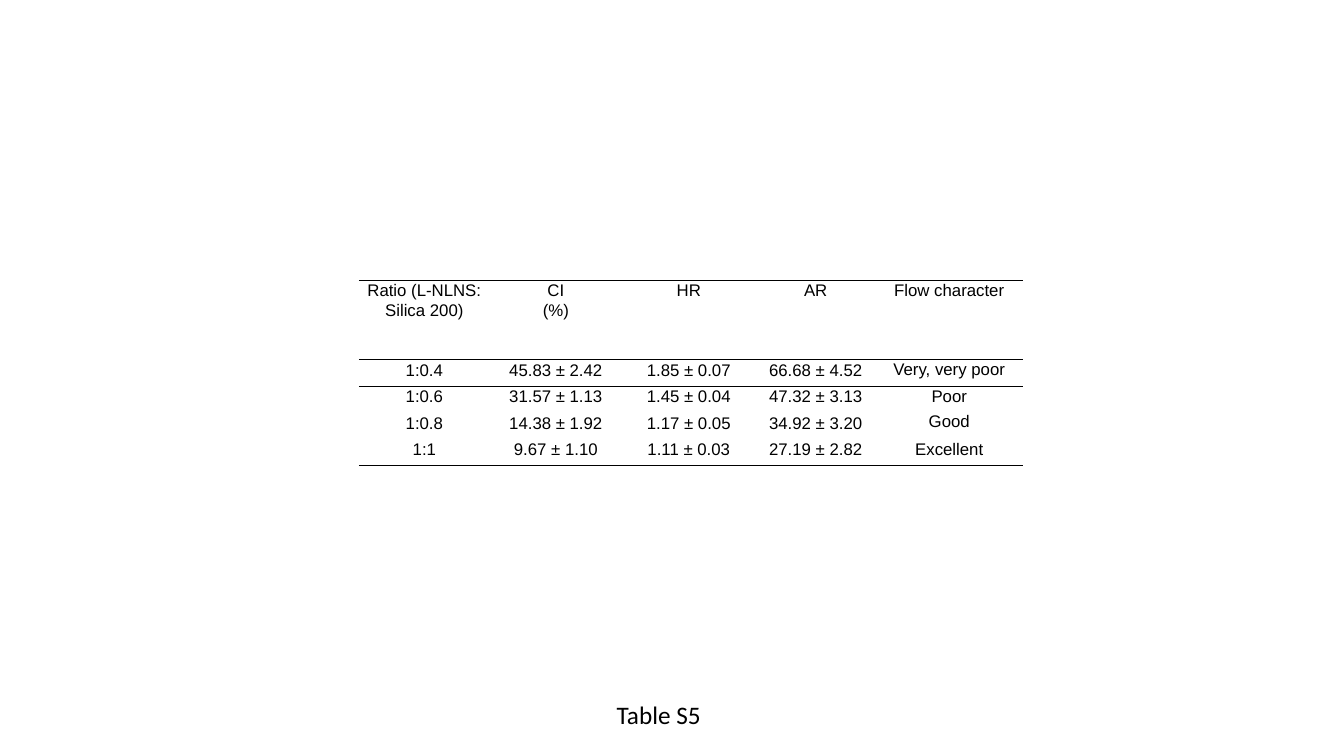
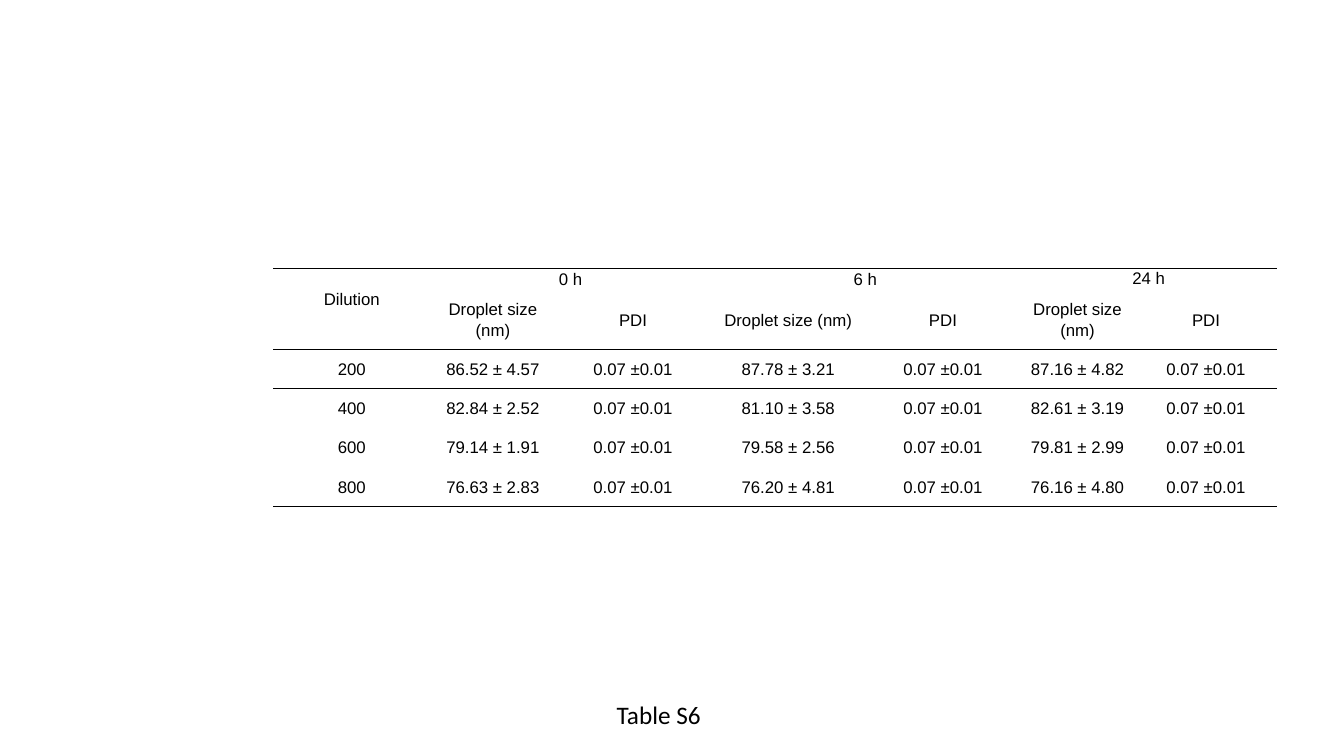
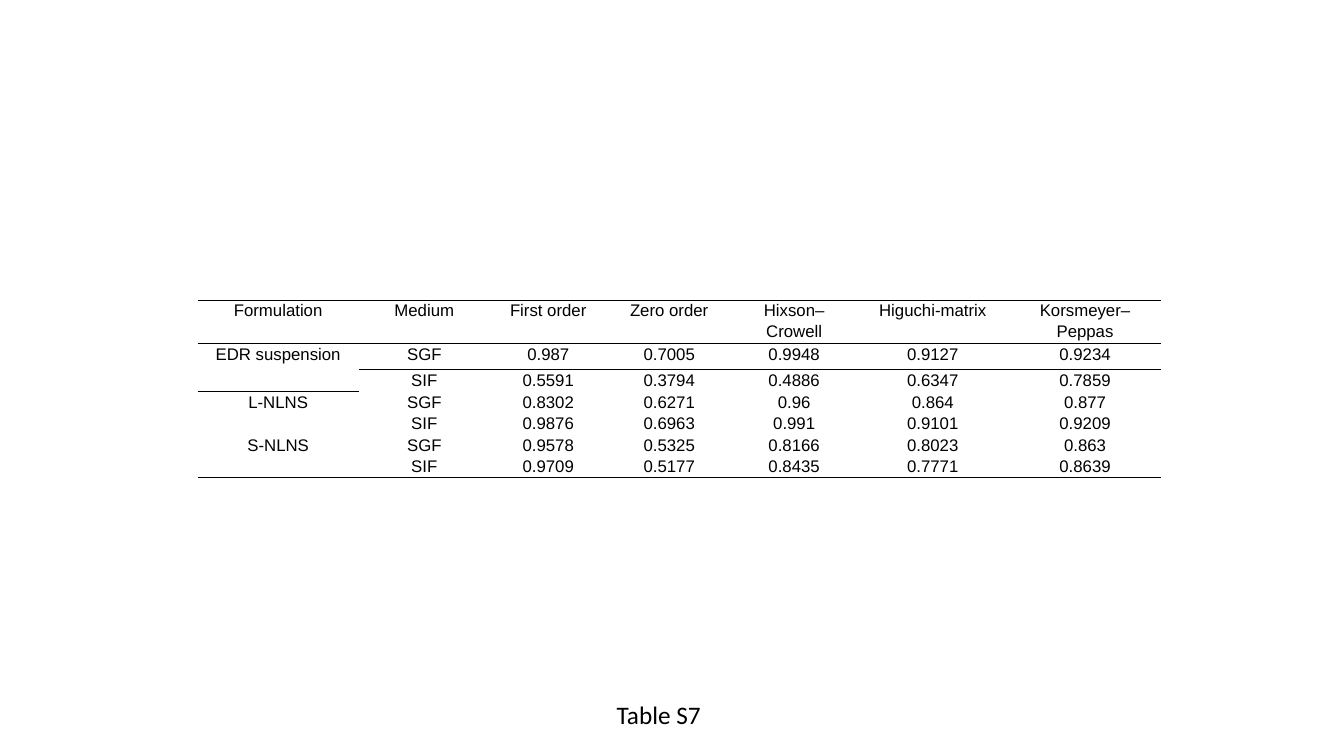
from dataclasses import dataclass, field

from lxml import etree
from pptx import Presentation
from pptx.dml.color import RGBColor
from pptx.enum.text import MSO_ANCHOR, MSO_AUTO_SIZE, PP_ALIGN
from pptx.oxml.ns import qn
from pptx.util import Inches, Pt

CENTER = PP_ALIGN.CENTER
TOP, MIDDLE = MSO_ANCHOR.TOP, MSO_ANCHOR.MIDDLE
FIT_TEXT = MSO_AUTO_SIZE.SHAPE_TO_FIT_TEXT

COLORS = {"text": "000000", "rule": "000000"}
FONTS = {"table": "Arial", "caption": "Calibri"}
PLAIN_STYLE = "{2D5ABB26-0587-4C30-8999-92F81FD0307C}"
W, H = Inches(13.33), Inches(7.5)
CAPTION_BOX = (45.15, 91.87, 9.08, 5.33)


def across(share):
    return round(W * share / 100)


def down(share):
    return round(H * share / 100)


@dataclass
class TableSpec:
    caption: str
    origin: tuple
    cols: list
    rows: list
    data: list
    rules: set
    merges: list = field(default_factory=list)
    anchor: object = TOP
    styles: dict = field(default_factory=dict)


def add_run(p, text, font, size):
    r = p.add_run()
    r.text = text
    r.font.name = font
    r.font.size = Pt(size)
    r.font.color.rgb = RGBColor.from_string(COLORS["text"])


def add_caption(slide, text, box):
    x, y, w, h = box
    sp = slide.shapes.add_textbox(across(x), down(y), across(w), down(h))
    tf = sp.text_frame
    tf.word_wrap = True
    tf.auto_size = FIT_TEXT
    add_run(tf.paragraphs[0], text, FONTS["caption"], 18)


def draw_rule(cell, side):
    ln = etree.Element(qn("a:" + side), w=str(Pt(1)))
    fill = etree.SubElement(ln, qn("a:solidFill"))
    etree.SubElement(fill, qn("a:srgbClr"), val=COLORS["rule"])
    cell._tc.get_or_add_tcPr().insert(0, ln)


def fill_cell(cell, text, anchor, margin=0.07, spacing=1.07, bottom=0):
    cell.fill.background()
    cell.margin_left = cell.margin_right = Inches(margin)
    cell.margin_top, cell.margin_bottom = 0, Inches(bottom)
    cell.vertical_anchor = anchor
    if text is None:
        return
    tf = cell.text_frame
    for i, line in enumerate(text.split("\n")):
        p = tf.add_paragraph() if i else tf.paragraphs[0]
        p.alignment = CENTER
        p.line_spacing = spacing
        add_run(p, line, FONTS["table"], 12)


def add_data_table(slide, t):
    x, y = t.origin
    frame = slide.shapes.add_table(len(t.rows), len(t.cols), across(x), down(y),
                                   across(sum(t.cols)), down(sum(t.rows)))
    table = frame.table
    table._tbl.tblPr.find(qn("a:tableStyleId")).text = PLAIN_STYLE
    table.first_row = table.horz_banding = False
    for col, width in zip(table.columns, t.cols):
        col.width = across(width)
    for row, height in zip(table.rows, t.rows):
        row.height = down(height)
    for first, last in t.merges:
        table.cell(*first).merge(table.cell(*last))
    for r, values in enumerate(t.data):
        for c, text in enumerate(values):
            cell = table.cell(r, c)
            fill_cell(cell, text, **{"anchor": t.anchor, **t.styles.get((r, c), {})})
            if t.rules & set(range(r, r + cell.span_height)):
                draw_rule(cell, "lnB")
            if r == 0:
                draw_rule(cell, "lnT")


def add_table_slide(prs, t):
    slide = prs.slides.add_slide(prs.slide_layouts[6])
    add_data_table(slide, t)
    add_caption(slide, t.caption, CAPTION_BOX)


FLOW = TableSpec(
    caption="Table S5",
    origin=(26.7, 37.07),
    cols=[9.75, 9.82, 9.97, 8.92, 10.95],
    rows=[10.53] + [3.5] * 4,
    data=[
        ["Ratio (L-NLNS: Silica 200)", "CI\n(%)", "HR", "AR", "Flow character"],
        ["1:0.4", "45.83 ± 2.42", "1.85 ± 0.07", "66.68 ± 4.52", "Very, very poor"],
        ["1:0.6", "31.57 ± 1.13", "1.45 ± 0.04", "47.32 ± 3.13", "Poor"],
        ["1:0.8", "14.38 ± 1.92", "1.17 ± 0.05", "34.92 ± 3.20", "Good"],
        ["1:1", "9.67 ± 1.10", "1.11 ± 0.03", "27.19 ± 2.82", "Excellent"],
    ],
    rules={0, 1, 4},
    styles={(r, 4): {"spacing": 1.0} for r in (1, 3)},
)

PDI = "0.07 ±0.01"
DROPLET_SIZES = {
    "200": ["86.52 ± 4.57", "87.78 ± 3.21", "87.16 ± 4.82"],
    "400": ["82.84 ± 2.52", "81.10 ± 3.58", "82.61 ± 3.19"],
    "600": ["79.14 ± 1.91", "79.58 ± 2.56", "79.81 ± 2.99"],
    "800": ["76.63 ± 2.83", "76.20 ± 4.81", "76.16 ± 4.80"],
}

DILUTION = TableSpec(
    caption="Table S6",
    origin=(20.33, 35.47),
    cols=[11.7, 9.3, 11.55, 11.55, 11.48, 8.55, 10.58],
    rows=[2.67, 7.87] + [5.2] * 4,
    data=[
        ["Dilution", "0 h", None, "6 h", None, "24 h", None],
        [None] + ["Droplet size (nm)", "PDI"] * 3,
    ] + [
        [dilution] + [v for size in sizes for v in (size, PDI)]
        for dilution, sizes in DROPLET_SIZES.items()
    ],
    rules={1, 2, 5},
    merges=[((0, 0), (1, 0))] + [((0, c), (0, c + 1)) for c in (1, 3, 5)],
    anchor=MIDDLE,
    styles={
        (0, 0): {"bottom": 0.2},
        (0, 5): {"anchor": TOP},
        **{(r, c): {"margin": 0.05, "spacing": 1.05}
           for r in range(2, 6) for c in range(1, 7)},
    },
)

KINETICS = TableSpec(
    caption="Table S7",
    origin=(14.7, 39.73),
    cols=[12, 9.75, 8.7, 9.3, 9.3, 11.33, 11.33],
    rows=[5.73, 3.47] + [2.53] * 5,
    data=[
        ["Formulation", "Medium", "First order", "Zero order", "Hixson–Crowell",
         "Higuchi-matrix", "Korsmeyer–Peppas"],
        ["EDR suspension", "SGF", "0.987", "0.7005", "0.9948", "0.9127", "0.9234"],
        [None, "SIF", "0.5591", "0.3794", "0.4886", "0.6347", "0.7859"],
        ["L-NLNS", "SGF", "0.8302", "0.6271", "0.96", "0.864", "0.877"],
        [None, "SIF", "0.9876", "0.6963", "0.991", "0.9101", "0.9209"],
        ["S-NLNS", "SGF", "0.9578", "0.5325", "0.8166", "0.8023", "0.863"],
        [None, "SIF", "0.9709", "0.5177", "0.8435", "0.7771", "0.8639"],
    ],
    rules={0, 1, 6},
    merges=[((r, 0), (r + 1, 0)) for r in (1, 3, 5)],
)


def main():
    prs = Presentation()
    prs.slide_width, prs.slide_height = W, H
    for t in (FLOW, DILUTION, KINETICS):
        add_table_slide(prs, t)
    prs.save("out.pptx")


if __name__ == "__main__":
    main()
